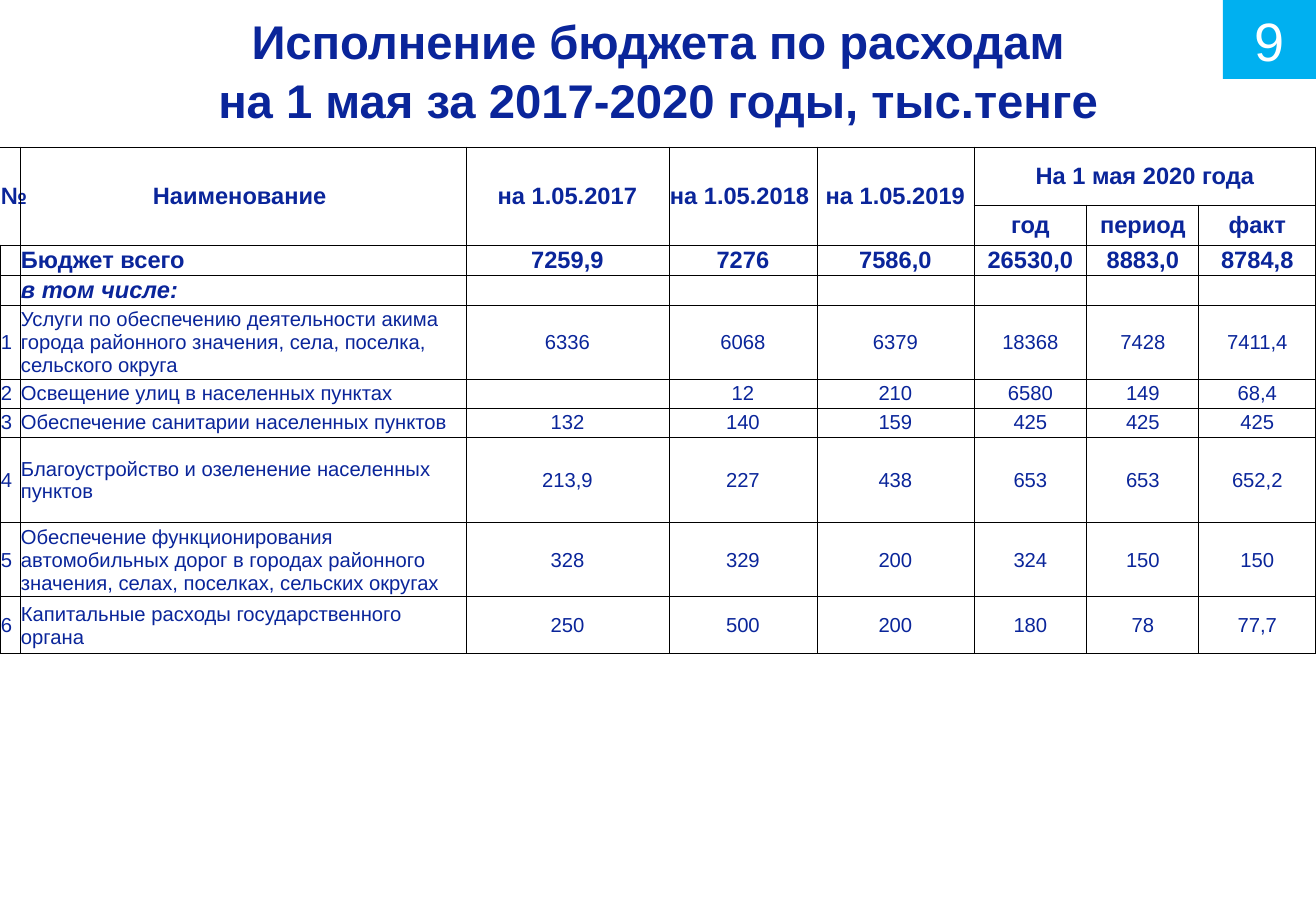
from dataclasses import dataclass

from lxml.etree import SubElement
from pptx import Presentation
from pptx.dml.color import RGBColor
from pptx.enum.shapes import MSO_SHAPE
from pptx.enum.text import MSO_ANCHOR, MSO_AUTO_SIZE, PP_ALIGN
from pptx.oxml.ns import qn
from pptx.slide import Slide
from pptx.table import Table, _Cell as Cell
from pptx.text.text import TextFrame
from pptx.util import Emu, Pt

EMU_PER_PX = 7526
SLIDE_WIDTH, SLIDE_HEIGHT = 1316, 911
COLORS = {"text": "0A259A", "badge": "00B0F0", "white": "FFFFFF", "border": "000000"}
FONT = "Arial"
COLUMN_WIDTHS = (20, 446, 203, 148, 157, 113, 112, 117)
HEADER_ROWS = 2


@dataclass(frozen=True)
class TextStyle:
    size: int
    color: str = "text"
    bold: bool = False
    italic: bool = False
    align: PP_ALIGN = PP_ALIGN.CENTER


@dataclass(frozen=True)
class BudgetRow:
    height: int
    texts: tuple[str, ...]
    size: int = 12
    bold: bool = False
    italic: bool = False


@dataclass(frozen=True)
class Merge:
    row: int
    column: int
    last_row: int
    last_column: int


ROWS = (
    BudgetRow(58, ("№", "Наименование ", "на 1.05.2017", "на 1.05.2018 ", "на 1.05.2019",
                   "На 1 мая 2020 года", "", ""), 14, True),
    BudgetRow(40, ("", "", "", "", "", "год", "период", "факт"), 14, True),
    BudgetRow(30, ("", "Бюджет всего", "7259,9", "7276", "7586,0",
                   "26530,0", "8883,0", "8784,8"), 14, True),
    BudgetRow(30, ("", "в том числе:", "", "", "", "", "", ""), 14, True, True),
    BudgetRow(74, ("1", "Услуги по обеспечению деятельности акима города районного значения, "
                   "села, поселка, сельского округа",
                   "6336", "6068", "6379", "18368", "7428", "7411,4")),
    BudgetRow(29, ("2", "Освещение улиц в населенных пунктах",
                   "", "12", "210", "6580", "149", "68,4")),
    BudgetRow(29, ("3", "Обеспечение санитарии населенных пунктов",
                   "132", "140", "159", "425", "425", "425")),
    BudgetRow(86, ("4", "Благоустройство и озеленение населенных пунктов",
                   "213,9", "227", "438", "653", "653", "652,2")),
    BudgetRow(74, ("5", "Обеспечение функционирования автомобильных дорог в городах "
                   "районного значения, селах, поселках, сельских округах",
                   "328", "329", "200", "324", "150", "150")),
    BudgetRow(57, ("6", "Капитальные расходы государственного органа",
                   "250", "500", "200", "180", "78", "77,7")),
)
MERGES = (*(Merge(0, column, 1, column) for column in range(5)), Merge(0, 5, 0, 7))


def px(length: int) -> Emu:
    return Emu(length * EMU_PER_PX)


def write_text(frame: TextFrame, text: str, style: TextStyle) -> None:
    frame.text = text
    for paragraph in frame.paragraphs:
        paragraph.alignment = style.align
        font = paragraph.font
        font.name, font.size = FONT, Pt(style.size)
        font.bold, font.italic = style.bold, style.italic
        font.color.rgb = RGBColor.from_string(COLORS[style.color])
        if not text:
            SubElement(paragraph._p, qn("a:endParaRPr"), sz=str(style.size * 100))


def set_borders(cell: Cell, open_left: bool) -> None:
    properties = cell._tc.get_or_add_tcPr()
    for side in "LRTB":
        line = SubElement(properties, qn(f"a:ln{side}"), w=str(Pt(0.5)))
        if open_left and side == "L":
            SubElement(line, qn("a:noFill"))
        else:
            fill = SubElement(line, qn("a:solidFill"))
            SubElement(fill, qn("a:srgbClr"), val=COLORS["border"])


def add_title(slide: Slide, text: str) -> None:
    title = slide.shapes.title
    title.left, title.top, title.width, title.height = px(0), px(0), px(SLIDE_WIDTH), px(258)
    frame = title.text_frame
    frame.auto_size = MSO_AUTO_SIZE.NONE
    frame.vertical_anchor = MSO_ANCHOR.TOP
    frame.margin_left = frame.margin_right = px(6)
    frame.margin_top, frame.margin_bottom = px(9), px(6)
    write_text(frame, text, TextStyle(28, bold=True))
    frame.paragraphs[0].line_spacing = 1.05


def fill_cell(table: Table, row: int, column: int) -> None:
    budget_row = ROWS[row]
    cell = table.cell(row, column)
    is_label = row >= HEADER_ROWS and column < 2
    align = PP_ALIGN.LEFT if is_label else PP_ALIGN.CENTER
    cell.vertical_anchor = MSO_ANCHOR.MIDDLE
    cell.margin_left = cell.margin_right = cell.margin_top = px(1)
    cell.margin_bottom = px(0)
    style = TextStyle(budget_row.size, "text", budget_row.bold, budget_row.italic, align)
    write_text(cell.text_frame, budget_row.texts[column], style)
    set_borders(cell, open_left=row < HEADER_ROWS and column == 0)
    cell.fill.background()


def add_budget_table(slide: Slide) -> None:
    height = sum(row.height for row in ROWS)
    table = slide.shapes.add_table(len(ROWS), len(COLUMN_WIDTHS), px(0), px(147),
                                   px(SLIDE_WIDTH), px(height)).table
    table.first_row = table.horz_banding = False
    for column, width in enumerate(COLUMN_WIDTHS):
        table.columns[column].width = px(width)
    for row, budget_row in enumerate(ROWS):
        table.rows[row].height = px(budget_row.height)
        for column in range(len(COLUMN_WIDTHS)):
            fill_cell(table, row, column)
    for merge in MERGES:
        last_cell = table.cell(merge.last_row, merge.last_column)
        table.cell(merge.row, merge.column).merge(last_cell)


def add_page_badge(slide: Slide, number: str) -> None:
    badge = slide.shapes.add_shape(MSO_SHAPE.RECTANGLE, px(1223), px(0), px(93), px(79))
    badge.shadow.inherit = False
    badge.fill.solid()
    badge.fill.fore_color.rgb = RGBColor.from_string(COLORS["badge"])
    badge.line.fill.background()
    badge.text_frame.vertical_anchor = MSO_ANCHOR.MIDDLE
    write_text(badge.text_frame, number, TextStyle(32, "white"))


def main() -> None:
    presentation = Presentation()
    presentation.slide_width, presentation.slide_height = px(SLIDE_WIDTH), px(SLIDE_HEIGHT)
    slide = presentation.slides.add_slide(presentation.slide_layouts[5])

    # Heading
    add_title(slide, "Исполнение бюджета по расходам\vна 1 мая за 2017-2020 годы, тыс.тенге")
    # Spending by year
    add_budget_table(slide)
    # Page number
    add_page_badge(slide, "9")

    presentation.save("out.pptx")


if __name__ == "__main__":
    main()
